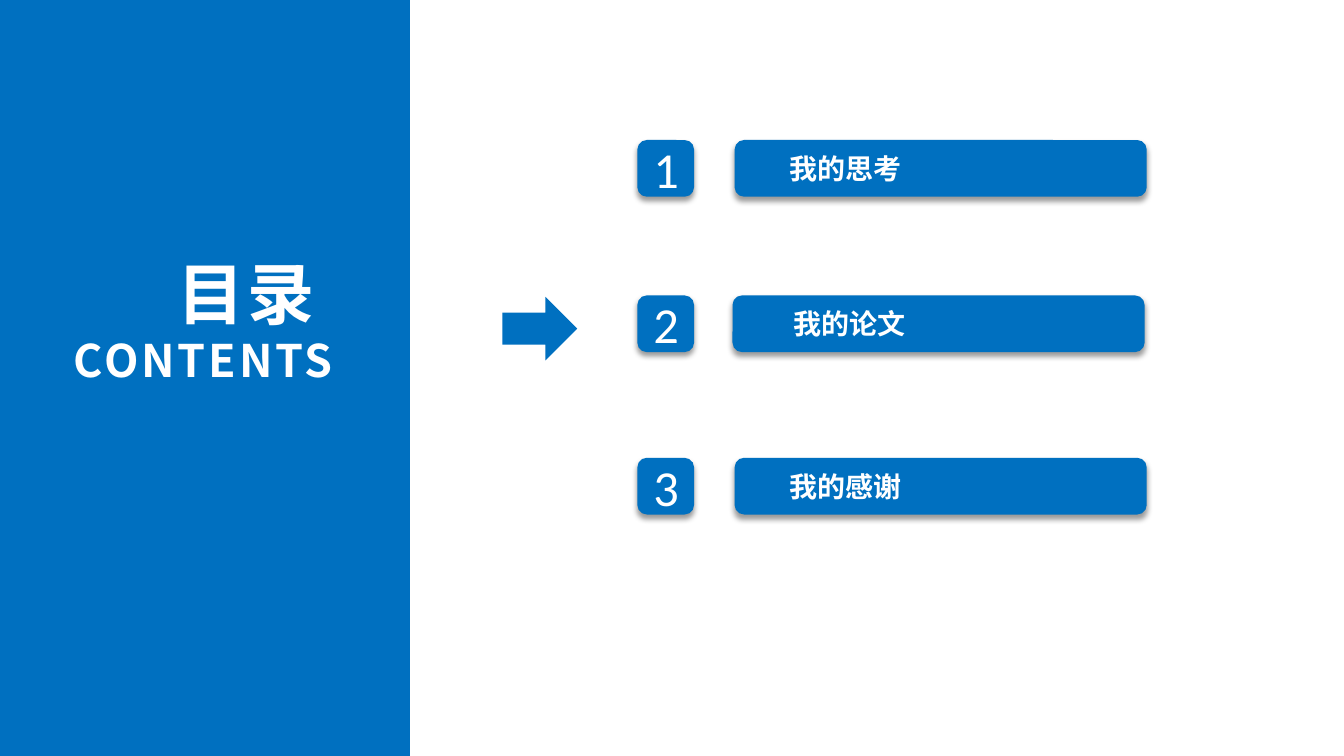
from lxml.etree import SubElement
from pptx import Presentation
from pptx.dml.color import RGBColor
from pptx.enum.shapes import MSO_SHAPE as Shape
from pptx.enum.text import MSO_ANCHOR as Anchor, MSO_AUTO_SIZE as AutoSize, PP_ALIGN as Align
from pptx.oxml import parse_xml
from pptx.oxml.ns import nsdecls, qn
from pptx.util import Pt

COLORS = {"blue": "0070C0", "white": "FFFFFF", "shadow": "000000"}
HAN_FONT = "Noto Sans CJK SC"
DIGIT_FONT = "Calibri"
TILE = 40.5

# Top of the row, left of the bar, left of the label, wording
ENTRIES = [
    (100, 525, 555, "我的思考"),
    (211, 523.5, 557.5, "我的论文"),
    (327, 525, 555, "我的感谢"),
]


def add_block(page, kind, left, top, width, height, shadow=False):
    block = page.shapes.add_shape(kind, Pt(left), Pt(top), Pt(width), Pt(height))
    block.fill.solid()
    block.fill.fore_color.rgb = RGBColor.from_string(COLORS["blue"])
    block.line.fill.background()
    block.shadow.inherit = False
    if shadow:
        effects = block.element.spPr.find(qn("a:effectLst"))
        effects.append(parse_xml(
            f'<a:outerShdw {nsdecls("a")} blurRad="{Pt(4)}" dist="{Pt(3)}" '
            f'dir="5400000" algn="t" rotWithShape="0"><a:srgbClr val="{COLORS["shadow"]}">'
            '<a:alpha val="40000"/></a:srgbClr></a:outerShdw>'))
    return block


def set_frame(frame, anchor):
    frame.word_wrap = True
    frame.auto_size = AutoSize.NONE
    frame.vertical_anchor = anchor
    frame.margin_left = frame.margin_right = Pt(9.5)
    frame.margin_top = frame.margin_bottom = Pt(5)


def format_para(para, size, font, align, bold=False, spacing=0):
    para.alignment = align
    para.font.size = Pt(size)
    para.font.bold = bold
    para.font.name = font
    para.font.color.rgb = RGBColor.from_string(COLORS["white"])
    defaults = para._p.pPr.find(qn("a:defRPr"))
    SubElement(defaults, qn("a:ea")).set("typeface", font)
    # Fonts and tracking are repeated on the run for East Asian text
    for span in para.runs:
        run_props = span._r.get_or_add_rPr()
        SubElement(run_props, qn("a:ea")).set("typeface", font)
        if spacing:
            run_props.set("spc", str(spacing * 100))


def add_heading(page):
    title = page.shapes.title
    title.left, title.top, title.width, title.height = Pt(26.5), Pt(175), Pt(221), Pt(106.5)
    frame = title.text_frame
    set_frame(frame, Anchor.TOP)
    frame.text = "目录 \nCONTENTS"
    for para, size in zip(frame.paragraphs, (48, 32)):
        format_para(para, size, HAN_FONT, Align.RIGHT, bold=True, spacing=2)


def add_entry(page, number, top, bar_left, label_left, wording):
    tile = add_block(page, Shape.ROUNDED_RECTANGLE, 455.5, top, TILE, TILE, shadow=True)
    add_block(page, Shape.ROUNDED_RECTANGLE, bar_left, top, 294.5, TILE, shadow=True)
    label = page.shapes.add_textbox(Pt(label_left), Pt(top + 3), Pt(209), Pt(34))
    for box, text, anchor, style in (
        (tile, str(number), Anchor.MIDDLE, (36, DIGIT_FONT, Align.CENTER)),
        (label, wording, Anchor.TOP, (20, HAN_FONT, Align.LEFT, True)),
    ):
        set_frame(box.text_frame, anchor)
        box.text_frame.text = text
        format_para(box.text_frame.paragraphs[0], *style)
    # Corner radius shared by tiles and bars
    for block in list(page.shapes)[-3:-1]:
        block.adjustments[0] = 0.167


def main():
    deck = Presentation()
    deck.slide_width, deck.slide_height = Pt(960.5), Pt(540)
    page = deck.slides.add_slide(deck.slide_layouts[5])

    # Side panel, sent behind the heading
    panel = add_block(page, Shape.RECTANGLE, 0, 0, 293, 540)
    page.shapes.title.element.addprevious(panel.element)
    add_heading(page)

    # Numbered entries
    for number, entry in enumerate(ENTRIES, start=1):
        add_entry(page, number, *entry)

    # Arrow to the current entry
    add_block(page, Shape.RIGHT_ARROW, 359, 212, 53.5, 45.5)

    deck.save("out.pptx")


if __name__ == "__main__":
    main()
